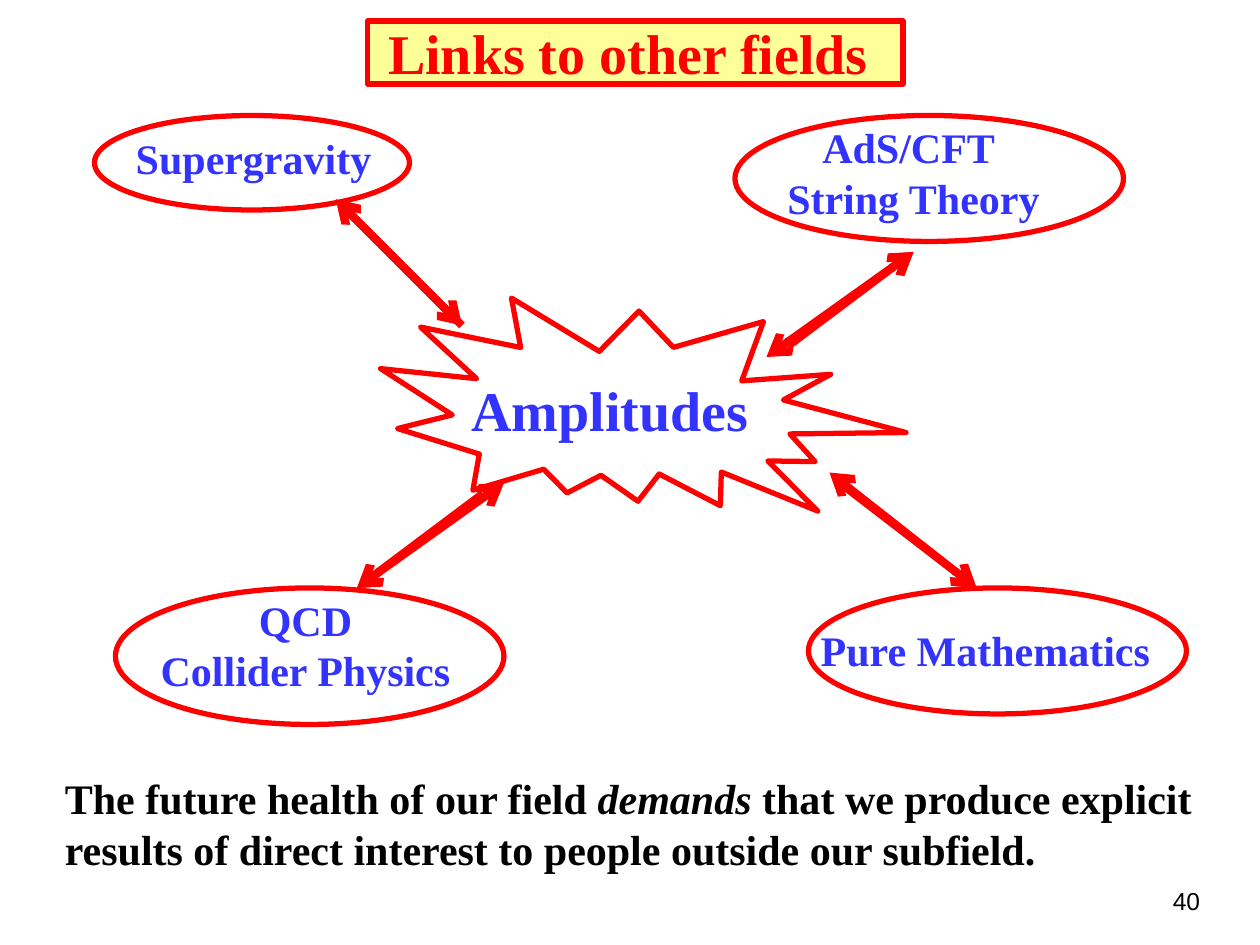
import pptx
import pptx.util
import pptx.dml.color
import pptx.enum.shapes
import pptx.enum.text
import pptx.oxml
import lxml.etree

RED = pptx.dml.color.RGBColor(255, 0, 0)
BLUE = pptx.dml.color.RGBColor(51, 51, 255)
BLACK = pptx.dml.color.RGBColor(0, 0, 0)
YELLOW = pptx.dml.color.RGBColor(255, 255, 0)
SERIF = "Times New Roman"
SHAPE = pptx.enum.shapes.MSO_SHAPE
ALIGN = pptx.enum.text.PP_ALIGN
QN = pptx.oxml.ns.qn

deck = pptx.Presentation()
deck.slide_width = pptx.util.Inches(10)
deck.slide_height = pptx.util.Inches(7.5)
slide = deck.slides.add_slide(deck.slide_layouts[5])
unit = deck.slide_width / 120


def grid(*cells):
    return [round(cell * unit) for cell in cells]


def style(frame, size, color, align, font=SERIF, bold=True):
    for line in frame.paragraphs:
        line.alignment = align
        for run in line.runs:
            run.font.name = font
            run.font.size = pptx.util.Pt(size)
            run.font.bold = bold
            run.font.color.rgb = color


title = slide.shapes.title
title.left, title.top, title.width, title.height = grid(35, 2, 51, 6)
title.text_frame.text = "Links to other fields "
title.text_frame.auto_size = pptx.enum.text.MSO_AUTO_SIZE.NONE
title.text_frame.vertical_anchor = pptx.enum.text.MSO_ANCHOR.MIDDLE
style(title.text_frame, 32, RED, ALIGN.CENTER)
title.fill.solid()
title.fill.fore_color.rgb = YELLOW
tint = title.fill._xPr.find(".//" + QN("a:srgbClr"))
lxml.etree.SubElement(tint, QN("a:alpha"), val="40000")
title.line.color.rgb = RED
title.line.width = pptx.util.Pt(3)

outlines = [
    (SHAPE.EXPLOSION2, (36, 28, 50, 22.4), 14.3),
    (SHAPE.OVAL, (9, 11, 30, 9), 0),
    (SHAPE.OVAL, (11, 56, 37, 13), 0),
    (SHAPE.OVAL, (77, 56, 36, 12), 0),
    (SHAPE.OVAL, (70, 11, 37, 12), 0),
]
for kind, place, turn in outlines:
    shape = slide.shapes.add_shape(kind, *grid(*place))
    shape.rotation = turn
    shape.shadow.inherit = False
    shape.fill.background()
    shape.line.color.rgb = RED
    shape.line.width = pptx.util.Pt(3)

links = [
    ((32, 19, 44, 31), True),
    ((32, 19, 44, 31), False),
    ((34, 56, 46, 47), False),
    ((48, 46, 34, 56), True),
    ((87, 24, 75, 33), False),
    ((87, 24, 73, 34), True),
    ((79, 45, 93, 56), True),
    ((93, 56, 80, 46), False),
]
for ends, double in links:
    link = slide.shapes.add_connector(
        pptx.enum.shapes.MSO_CONNECTOR.STRAIGHT, *grid(*ends))
    link.line.color.rgb = RED
    link.line.width = pptx.util.Pt(4.5)
    stroke = link.line._get_or_add_ln()
    for tag in ["a:headEnd", "a:tailEnd"] if double else ["a:headEnd"]:
        lxml.etree.SubElement(stroke, QN(tag), type="arrow")
    lxml.etree.SubElement(link._element.spPr, QN("a:effectLst"))

labels = [
    ("Amplitudes", (43.1, 35.2, 30, 7.7), 32),
    ("Supergravity", (11.6, 12, 25.1, 6), 24),
    ("AdS/CFT \nString Theory", (71, 11, 32, 10.9), 24),
    ("QCD\nCollider Physics", (14, 56, 30.2, 10.9), 24),
    ("Pure Mathematics", (76.8, 58.9, 34.1, 6), 24),
]
for text, place, size in labels:
    box = slide.shapes.add_textbox(*grid(*place))
    box.text_frame.text = text
    style(box.text_frame, size, BLUE, ALIGN.CENTER)

note = slide.shapes.add_textbox(*grid(5, 73, 110.8, 10.9)).text_frame
first = note.paragraphs[0]
for part in ["The future health of our field ", "demands",
             " that we produce explicit"]:
    run = first.add_run()
    run.text = part
    run.font.italic = part == "demands"
last = note.add_paragraph()
last.text = "results of direct interest to people outside our subfield."
style(note, 24, BLACK, ALIGN.LEFT)

page = slide.shapes.add_textbox(*grid(101, 83.8, 24, 6.2)).text_frame
page.text = "40"
style(page, 14, BLACK, ALIGN.CENTER, "Arial", False)

deck.save("out.pptx")
